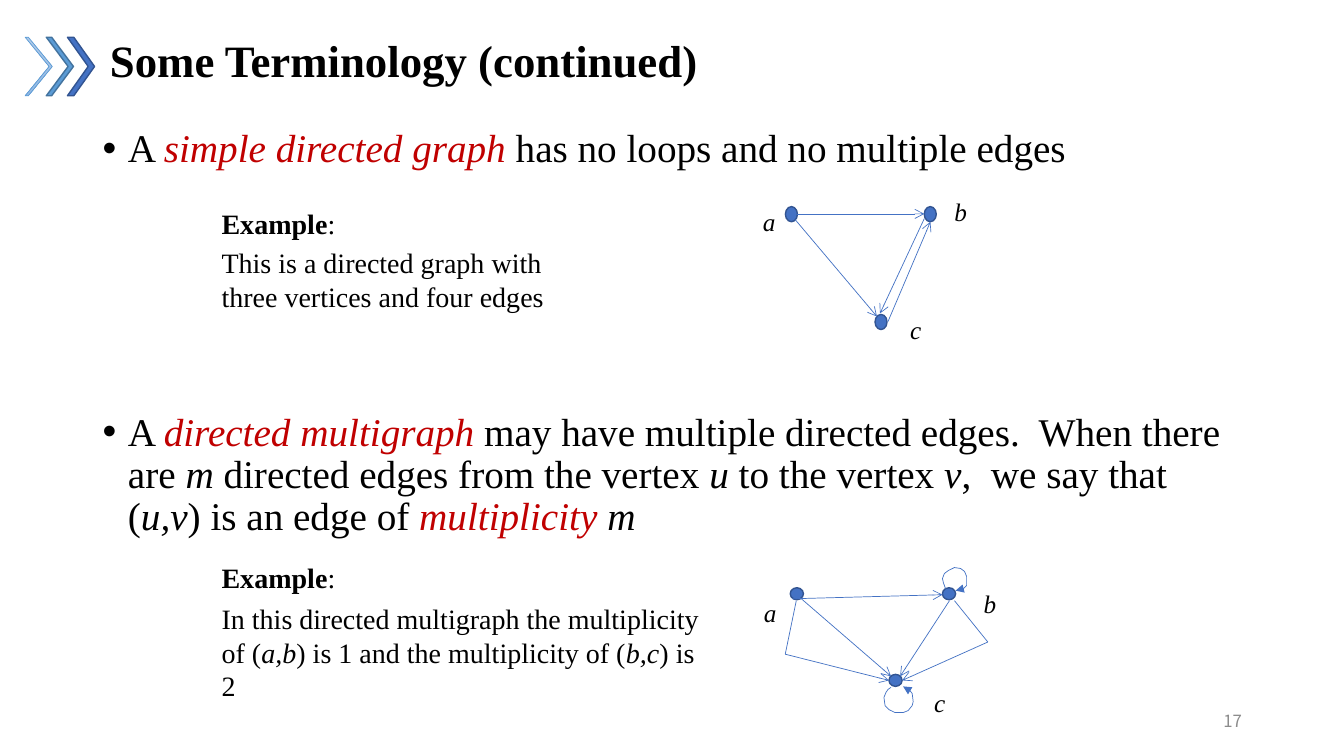
from lxml import etree
from pptx import Presentation
from pptx.dml.color import RGBColor
from pptx.enum import shapes, text
from pptx.oxml import ns
from pptx.util import Pt

COLORS = {"ink": "000000", "term": "C00000", "edge": "4472C4", "rim": "325491",
          "sky": "5B9BD5", "sky_rim": "43739E", "pale": "B1CBE9",
          "pale_end": "93B9E4", "number": "8C8C8C"}
SERIF = "Times New Roman"

TITLE = "Some Terminology (continued)"
# Runs are (text, style); styles: "" plain, "i" italic, "b" bold, "t" red italic term
BULLETS = [
    (0, [("A ", ""), ("simple directed graph ", "t"),
         ("has no loops and no multiple edges", "")]),
    (172, [("A ", ""), ("directed multigraph ", "t"),
           ("may have multiple directed edges.  When there are ", ""), ("m", "i"),
           (" directed edges from the vertex ", ""), ("u", "i"),
           (" to the vertex ", ""), ("v", "i"), (",  we say that (", ""),
           ("u,v", "i"), (") is an edge of ", ""), ("multiplicity", "t"), (" m", "i")]),
]
HEADING = [("Example", "b"), (":", "")]
EXAMPLES = [  # left, top, width, height, runs
    (151.2, 144, 108, 31.5, HEADING),
    (151.2, 172, 276.5, 55.5,
     [("This is a directed graph with three vertices and four edges", "")]),
    (151.2, 396.7, 108, 31.5, HEADING),
    (151.2, 426.2, 365.8, 55.5,
     [("In this directed multigraph the multiplicity of (", ""), ("a,b", "i"),
      (") is 1 and the multiplicity of (", ""), ("b,c", "i"), (") is 2", "")]),
]
CHEVRONS = [  # adjustment, fill, line, line width
    (0.882, "pale", "sky", 0.5),
    (0.804, "sky", "sky_rim", 1),
    (0.765, "edge", "rim", 1),
]
SIMPLE_GRAPH = {
    "dot": (8.6, 10.8),
    "vertices": [(561, 147.6), (660.2, 147.6), (625, 224.6)],
    "labels": [("a", 537.8, 144), ("b", 674.6, 136.8), ("c", 643, 221)],
    "label_width": 17.3,
    "arrows": [(569.5, 152.8, 660.2, 152.8), (568.1, 157, 626.4, 226.1),
               (660.2, 156.2, 628.6, 223.9), (634.3, 229.7, 664.6, 158.4)],
    "lines": [],
    "loops": [],
}
MULTIGRAPH = {
    "dot": (9.4, 8.6),
    "vertices": [(564.5, 419.8), (673.2, 419.8), (635, 481.7)],
    "labels": [("a", 538.6, 423.4), ("b", 695.5, 416.9), ("c", 660.2, 487.4)],
    "label_width": 19.4,
    "arrows": [(566, 427.7, 673.2, 424.8), (572.4, 427.7, 636.5, 483.1),
               (678.2, 429.1, 643, 483.1), (560.9, 467.3, 635, 486),
               (705.6, 458.6, 644.4, 486)],
    "lines": [(560.9, 467.3, 568.8, 429.1), (705.6, 458.6, 681.8, 429.1)],
    "loops": [
        [(636.5, 491), (634.3, 492.5), (632.9, 494.6), (631.4, 498.2), (632.2, 504),
         (635, 506.9), (639.4, 509), (645.1, 509), (648.7, 507.6), (651.6, 504),
         (652.3, 501.1), (651.6, 495.4), (649.4, 492.5), (645.1, 490.3)],
        [(675.4, 420.5), (673.9, 416.2), (673.2, 413.3), (674.6, 409.7), (677.5, 407.5),
         (681.8, 405.4), (686.2, 406.1), (689, 408.2), (690.5, 411.8), (690.5, 418.3),
         (688.3, 420.5), (682.6, 421.9)],
    ],
}


def color(name):
    return RGBColor.from_string(COLORS[name])


def place(shape, left, top, width, height):
    shape.left, shape.top = Pt(left), Pt(top)
    shape.width, shape.height = Pt(width), Pt(height)


def write(para, runs, size, font=SERIF, ink="ink"):
    para.font.size, para.font.name = Pt(size), font
    para.font.color.rgb = color(ink)
    for words, style in runs:
        span = para.add_run()
        span.text = words
        if style == "b":
            span.font.bold = True
        elif style:
            span.font.italic = True
        if style == "t":
            span.font.color.rgb = color("term")


def add_text(page, left, top, width, height, runs, size):
    box = page.shapes.add_textbox(Pt(left), Pt(top), Pt(width), Pt(height))
    frame = box.text_frame
    frame.word_wrap = True
    frame.auto_size = text.MSO_AUTO_SIZE.SHAPE_TO_FIT_TEXT
    write(frame.paragraphs[0], runs, size)


def outline(shape, name, width, head=None):
    """Set the line, with an arrowhead of the given type at its end."""
    shape.line.color.rgb = color(name)
    shape.line.width = Pt(width)
    if head:
        etree.SubElement(shape.line._get_or_add_ln(), ns.qn("a:tailEnd"), type=head)


def add_edge(page, ends, head=None):
    edge = page.shapes.add_connector(shapes.MSO_CONNECTOR.STRAIGHT, *map(Pt, ends))
    outline(edge, "edge", 0.5, head)
    etree.SubElement(edge._element.spPr, ns.qn("a:effectLst"))


def add_loop(page, points):
    (x, y), *rest = points
    builder = page.shapes.build_freeform(Pt(x), Pt(y))
    builder.add_line_segments([(Pt(x), Pt(y)) for x, y in rest], close=False)
    loop = builder.convert_to_shape()
    loop.shadow.inherit = False
    loop.fill.background()
    outline(loop, "edge", 0.5, "triangle")


def add_preset(page, kind, box, fill, line, width):
    shape = page.shapes.add_shape(kind, *map(Pt, box))
    shape.shadow.inherit = False
    shape.fill.solid()
    shape.fill.fore_color.rgb = color(fill)
    outline(shape, line, width)
    return shape


def add_graph(page, graph):
    for vertex in graph["vertices"]:
        add_preset(page, shapes.MSO_SHAPE.OVAL, vertex + graph["dot"], "edge", "rim", 1)
    for ends in graph["arrows"]:
        add_edge(page, ends, "arrow")
    for ends in graph["lines"]:
        add_edge(page, ends)
    for points in graph["loops"]:
        add_loop(page, points)
    for name, left, top in graph["labels"]:
        add_text(page, left, top, graph["label_width"], 29, [(name, "i")], 18)


def add_chevrons(page):
    for i, (bend, fill, line, width) in enumerate(CHEVRONS):
        box = (18 + 15.1 * i, 26.6, 19.4, 41.8)
        chevron = add_preset(page, shapes.MSO_SHAPE.CHEVRON, box, fill, line, width)
        chevron.adjustments[0] = bend
        if fill == "pale":
            chevron.fill.gradient()
            chevron.fill.gradient_angle = 270
            for stop, name in zip(chevron.fill.gradient_stops, ("pale", "pale_end")):
                stop.color.rgb = color(name)


def fill_title(title):
    place(title, 71.3, 23, 570.2, 44.6)
    frame = title.text_frame
    frame.auto_size = text.MSO_AUTO_SIZE.NONE
    frame.vertical_anchor = text.MSO_ANCHOR.MIDDLE
    para = frame.paragraphs[0]
    para.alignment, para.line_spacing = text.PP_ALIGN.LEFT, 0.9
    write(para, [(TITLE, "b")], 32)


def fill_body(body):
    place(body, 66.2, 88.6, 828, 398.2)
    frame = body.text_frame
    frame.auto_size = text.MSO_AUTO_SIZE.NONE
    for i, (gap, runs) in enumerate(BULLETS):
        para = frame.add_paragraph() if i else frame.paragraphs[0]
        properties = para._p.get_or_add_pPr()
        properties.set("marL", str(Pt(18)))
        properties.set("indent", str(Pt(-18)))
        para.line_spacing, para.space_before = 0.9, Pt(gap)
        etree.SubElement(properties, ns.qn("a:buChar"), char="•")
        write(para, runs, 28)


def add_page_number(page):
    box = page.shapes.add_textbox(Pt(678.2), Pt(500.4), Pt(216), Pt(28.8))
    box.text_frame.word_wrap = True
    box.text_frame.vertical_anchor = text.MSO_ANCHOR.MIDDLE
    para = box.text_frame.paragraphs[0]
    para.alignment = text.PP_ALIGN.RIGHT
    write(para, [("17", "")], 12, "Noto Sans CJK SC", "number")


def main():
    deck = Presentation()
    deck.slide_width, deck.slide_height = Pt(960), Pt(540)
    page = deck.slides.add_slide(deck.slide_layouts[1])
    add_chevrons(page)
    fill_title(page.shapes.title)
    fill_body(page.placeholders[1])
    for left, top, width, height, runs in EXAMPLES:
        add_text(page, left, top, width, height, runs, 20)
    for graph in (SIMPLE_GRAPH, MULTIGRAPH):
        add_graph(page, graph)
    add_page_number(page)
    deck.save("out.pptx")


if __name__ == "__main__":
    main()
